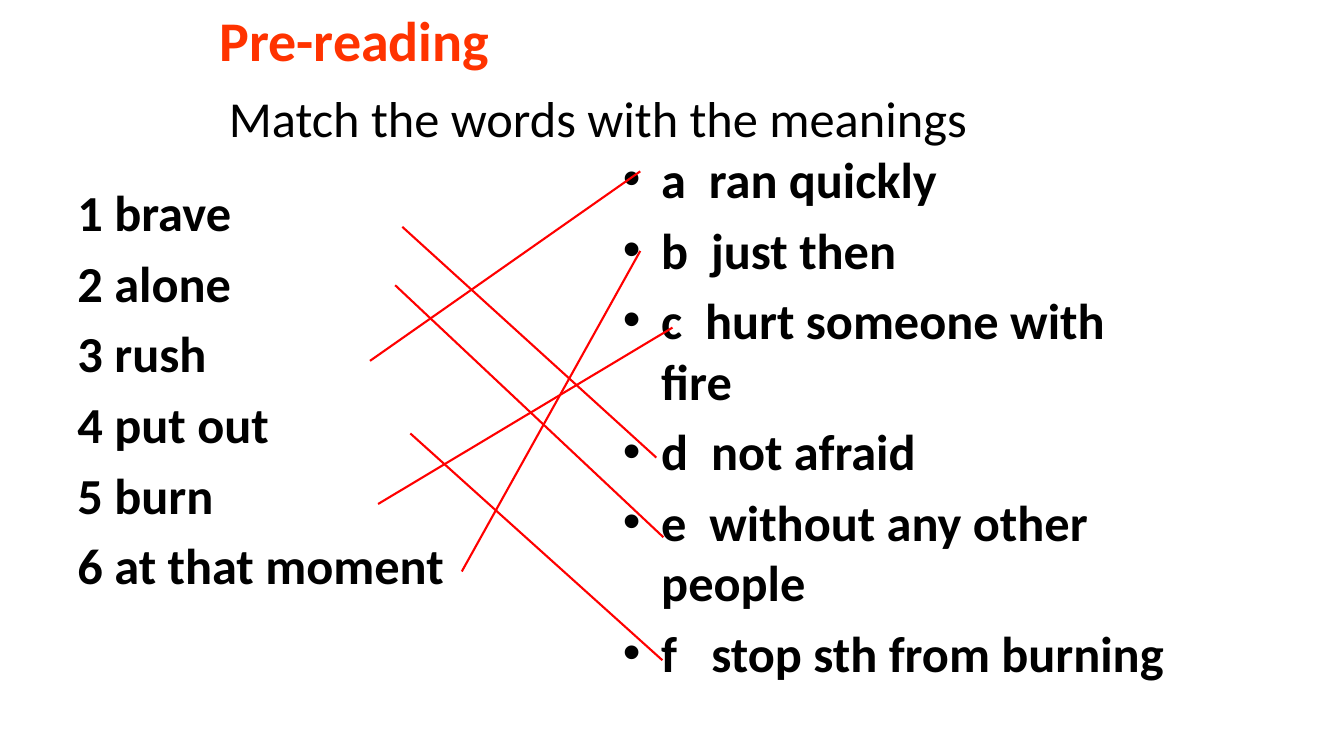
from lxml.etree import SubElement as Sub
from pptx import Presentation
from pptx.dml.color import RGBColor
from pptx.enum.shapes import MSO_CONNECTOR as LINK
from pptx.enum.text import MSO_ANCHOR as ANCHOR, MSO_AUTO_SIZE as FIT, PP_ALIGN as ALIGN
from pptx.oxml.ns import qn
from pptx.util import Pt

PX = 9144  # 100 px to the inch
BLACK = RGBColor(0, 0, 0)
RED = RGBColor(255, 0, 0)
ORANGE = RGBColor(255, 51, 0)
HANG = 38

WORDS = ["1 brave", "2 alone", "3 rush", "4 put out", "5 burn", "6 at that moment"]
MEANINGS = ["a  ran quickly", "b  just then", "c  hurt someone with fire",
            "d  not afraid", "e  without any other people", "f   stop sth from burning"]
# Each match runs from a word to its meaning: x1, y1, x2, y2
MATCHES = [(399, 225, 651, 454), (392, 283, 658, 533), (367, 358, 635, 170),
           (407, 430, 657, 655), (375, 500, 667, 325), (458, 567, 635, 249)]


def px(*sizes):
    return [size * PX for size in sizes]


def write(para, text, size=36, color=BLACK, bold=False):
    para.alignment = ALIGN.LEFT
    run = para.add_run()
    run.text = text
    font = run.font
    font.name, font.size, font.bold = "Calibri", Pt(size), bold
    font.color.rgb = color


def hang(para, bullet):
    """Give a list line its hanging indent, gap and bullet."""
    para.space_before = Pt(7.2)
    props = para._p.get_or_add_pPr()
    props.set("marL", str(HANG * PX))
    props.set("indent", str(-HANG * PX))
    if bullet:
        Sub(props, qn("a:buFont")).set("typeface", "Arial")
        Sub(props, qn("a:buChar")).set("char", bullet)


def add_title(slide, text, box):
    title = slide.shapes.title
    title.left, title.top, title.width, title.height = px(*box)
    frame = title.text_frame
    frame.auto_size = FIT.NONE
    frame.vertical_anchor = ANCHOR.MIDDLE
    write(frame.paragraphs[0], text)


def add_list(slide, lines, box, bullet=None):
    frame = slide.shapes.add_textbox(*px(*box)).text_frame
    frame.word_wrap = True
    for i, line in enumerate(lines):
        para = frame.add_paragraph() if i else frame.paragraphs[0]
        hang(para, bullet)
        write(para, line, bold=True)


def add_match(slide, ends):
    line = slide.shapes.add_connector(LINK.STRAIGHT, *px(*ends))
    line.line.color.rgb = RED
    line.line.width = Pt(1.5)
    Sub(line._element.spPr, qn("a:effectLst"))


def add_label(slide, text, box):
    frame = slide.shapes.add_textbox(*px(*box)).text_frame
    frame.word_wrap = False
    frame.auto_size = FIT.SHAPE_TO_FIT_TEXT
    write(frame.paragraphs[0], text, size=40, color=ORANGE, bold=True)


def main():
    deck = Presentation()
    deck.slide_width, deck.slide_height = px(1333, 750)
    slide = deck.slides.add_slide(deck.slide_layouts[5])
    add_title(slide, "Match the words with the meanings", (217, 58, 900, 117))
    add_list(slide, WORDS, (67, 175, 589, 495))
    add_list(slide, MEANINGS, (608, 142, 558, 608), bullet="•")
    for ends in MATCHES:
        add_match(slide, ends)
    add_label(slide, "Pre-reading", (208, 1, 291, 77))
    deck.save("out.pptx")


if __name__ == "__main__":
    main()
